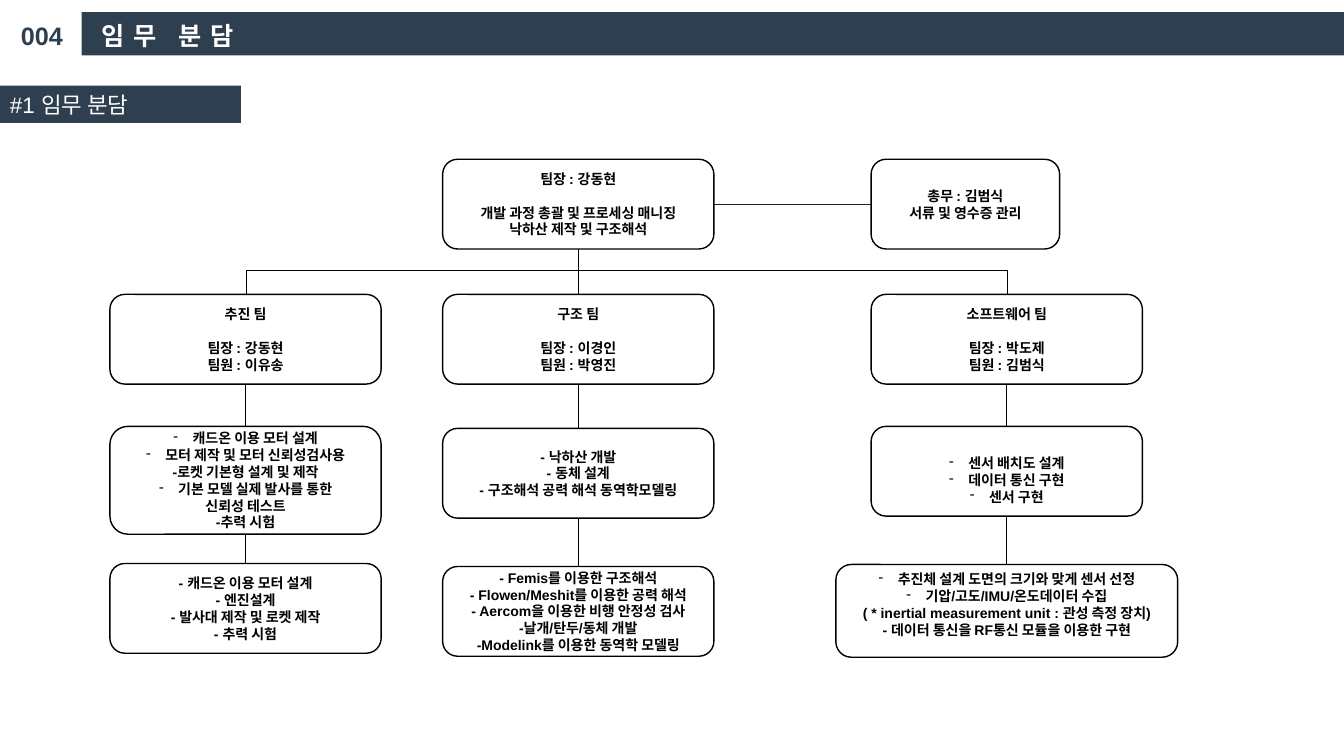
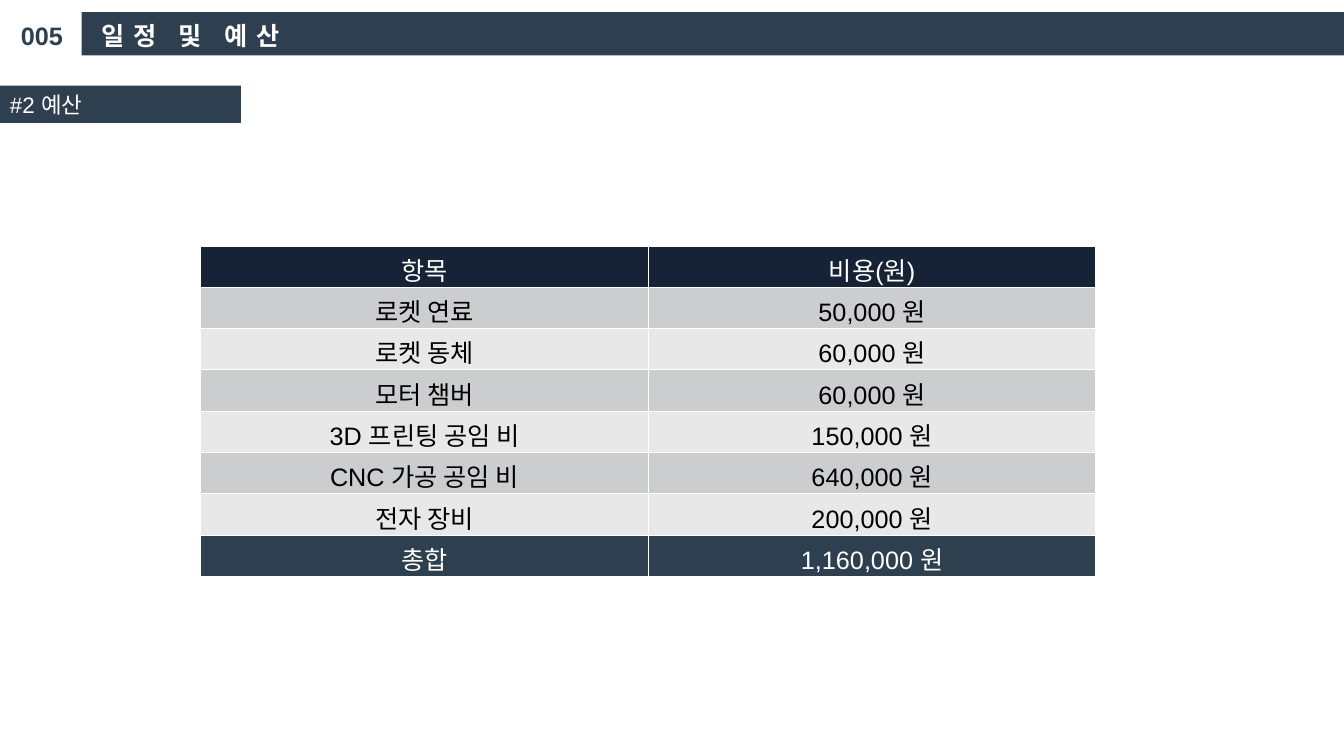
from lxml.etree import SubElement
from pptx import Presentation
from pptx.dml.color import RGBColor
from pptx.enum.shapes import MSO_CONNECTOR as Line, MSO_SHAPE as Shape
from pptx.enum.text import MSO_ANCHOR as Anchor, PP_ALIGN as Align
from pptx.oxml.ns import qn
from pptx.util import Inches, Pt

SLATE = RGBColor(0x2E, 0x3F, 0x4F)
NAVY = RGBColor(0x16, 0x23, 0x37)
WHITE = RGBColor(0xFF, 0xFF, 0xFF)
BLACK = RGBColor(0x00, 0x00, 0x00)
DARK_BAND = RGBColor(0xCC, 0xCD, 0xCE)
LIGHT_BAND = RGBColor(0xE8, 0xE8, 0xE8)
FONT = "Arial"
TOP, LEFT, BOTTOM, RIGHT = range(4)
BOX_WIDTH, BOX_HEIGHT = 2.69, 0.89
LINE_GAP = 12
INSET = 0.05


class Bullet(str):
    pass


class SlideBuilder:
    def __init__(self, deck):
        self.deck = deck
        self.slide = None

    def start(self, number, title, section):
        self.slide = self.deck.slides.add_slide(self.deck.slide_layouts[6])
        self.band(0.81, 0.12, 12.52, 0.43)
        heading = self.label(0.91, 4, title, WHITE)
        heading.runs[0].font._element.set("spc", "600")
        self.label(0.11, 0.7, number, SLATE)
        tab = self.band(0, 0.85, 2.39, 0.37)
        tab.text_frame.vertical_anchor = Anchor.MIDDLE
        self.fill_text(tab.text_frame.paragraphs[0], section, 16, WHITE, Align.LEFT)

    def fill_text(self, para, text, size, color, align, bold=False):
        para.text = text
        para.alignment = align
        para.font.name = FONT
        para.font.size = Pt(size)
        para.font.bold = bold
        para.font.color.rgb = color
        return para

    def label(self, left, width, text, color):
        box = self.slide.shapes.add_textbox(Inches(left), Inches(0.15), Inches(width), Inches(0.4))
        box.text_frame.word_wrap = True
        return self.fill_text(box.text_frame.paragraphs[0], text, 18, color, Align.LEFT, True)

    def shape(self, kind, left, top, width, height, fill):
        shape = self.slide.shapes.add_shape(
            kind, Inches(left), Inches(top), Inches(width), Inches(height))
        shape.shadow.inherit = False
        shape.fill.solid()
        shape.fill.fore_color.rgb = fill
        return shape

    def band(self, left, top, width, height):
        band = self.shape(Shape.RECTANGLE, left, top, width, height, SLATE)
        band.line.fill.background()
        return band

    def box(self, left, top, lines, width=BOX_WIDTH, height=BOX_HEIGHT,
            heading=False, above=0, below=0):
        box = self.shape(Shape.ROUNDED_RECTANGLE, left, top, width, height, WHITE)
        box.line.color.rgb = BLACK
        box.line.width = Pt(1)
        frame = box.text_frame
        frame.word_wrap = True
        frame.vertical_anchor = Anchor.MIDDLE
        frame.margin_top = Inches(INSET + above)
        frame.margin_bottom = Inches(INSET + below)
        for index, text in enumerate(lines):
            para = frame.paragraphs[0] if index == 0 else frame.add_paragraph()
            self.fill_text(para, str(text), 10, BLACK, Align.CENTER, True)
            if heading and index == 0:
                para.space_after = Pt(LINE_GAP)
            if isinstance(text, Bullet):
                self.bullet(para)
        return box

    def bullet(self, para):
        properties = para._p.get_or_add_pPr()
        properties.set("marL", str(Inches(0.19)))
        properties.set("indent", str(-Inches(0.19)))
        mark = properties.makeelement(qn("a:buChar"), {"char": "-"})
        properties.find(qn("a:defRPr")).addprevious(mark)

    def connector(self, kind, color=BLACK, ends=(0, 0, 0, 0)):
        connector = self.slide.shapes.add_connector(kind, *map(Inches, ends))
        connector.line.color.rgb = color
        connector.line.width = Pt(0.5)
        SubElement(connector._element.spPr, qn("a:effectLst"))
        return connector

    def join(self, first, second, sides=(BOTTOM, TOP), color=BLACK):
        connector = self.connector(Line.STRAIGHT, color)
        connector.begin_connect(first, sides[0])
        connector.end_connect(second, sides[1])

    def bracket(self, left, right, bottom, rise):
        span, depth = right - left, 0.01
        x, y = (left + right - depth) / 2, bottom - (span + depth) / 2
        connector = self.connector(Line.ELBOW, ends=(x + depth, y + span, x, y))
        connector._element.spPr.find(qn("a:xfrm")).set("rot", "5400000")
        guides = connector._element.spPr.find(qn("a:prstGeom")).get_or_add_avLst()
        SubElement(guides, qn("a:gd"), name="adj1", fmla=f"val {round(rise / depth * 100000)}")

    def table(self, left, top, column_width, row_height, rows):
        frame = self.slide.shapes.add_table(
            len(rows), len(rows[0]), Inches(left), Inches(top),
            Inches(column_width * len(rows[0])), Inches(row_height * len(rows)))
        last = len(rows) - 1
        for row, values in enumerate(rows):
            band = DARK_BAND if row % 2 else LIGHT_BAND
            fill = {0: NAVY, last: SLATE}.get(row, band)
            color = WHITE if row in (0, last) else BLACK
            for column, text in enumerate(values):
                cell = frame.table.cell(row, column)
                cell.fill.solid()
                cell.fill.fore_color.rgb = fill
                self.fill_text(cell.text_frame.paragraphs[0], text, 18, color, Align.CENTER)


def build_roles(page):
    page.start("004", "임무 분담", "#1 임무 분담")
    leader = page.box(4.39, 1.58, [
        "팀장 : 강동현", "개발 과정 총괄 및 프로세싱 매니징", "낙하산 제작 및 구조해석"], heading=True)
    treasurer = page.box(8.64, 1.58, ["총무 : 김범식", "서류 및 영수증 관리"], width=1.87)
    propulsion, structure, software = [
        page.box(left, 2.92, [name, f"팀장 : {head}", f"팀원 : {member}"], heading=True)
        for left, name, head, member in [
            (1.09, "추진 팀", "강동현", "이유송"),
            (4.39, "구조 팀", "이경인", "박영진"),
            (8.64, "소프트웨어 팀", "박도제", "김범식")]]
    motor = page.box(1.09, 4.23, [
        Bullet("캐드온 이용 모터 설계"), Bullet("모터 제작 및 모터 신뢰성검사용"),
        "-로켓 기본형 설계 및 제작", Bullet("기본 모델 실제 발사를 통한"),
        "신뢰성 테스트", "-추력 시험"], height=1.07)
    airframe = page.box(4.39, 4.25, [
        "- 낙하산 개발", "- 동체 설계", "- 구조해석 공력 해석 동역학모델링"])
    sensors = page.box(8.64, 4.23, [
        Bullet("센서 배치도 설계"), Bullet("데이터 통신 구현"), Bullet("센서 구현")], above=0.17)
    engine = page.box(1.09, 5.59, [
        "- 캐드온 이용 모터 설계", "- 엔진설계", "- 발사대 제작 및 로켓 제작", "- 추력 시험"])
    analysis = page.box(4.39, 5.62, [
        "- Femis를 이용한 구조해석", "- Flowen/Meshit를 이용한 공력 해석",
        "- Aercom을 이용한 비행 안정성 검사", "-날개/탄두/동체 개발",
        "-Modelink를 이용한 동역학 모델링"])
    telemetry = page.box(8.29, 5.6, [
        Bullet("추진체 설계 도면의 크기와 맞게 센서 선정"), Bullet("기압/고도/IMU/온도데이터 수집"),
        "( * inertial measurement unit : 관성 측정 장치)",
        "- 데이터 통신을 RF통신 모듈을 이용한 구현"], width=3.39, height=0.92, below=0.13)
    page.join(leader, structure)
    for team, tasks, details in [
            (propulsion, motor, engine), (structure, airframe, analysis),
            (software, sensors, telemetry)]:
        page.join(team, tasks)
        page.join(tasks, details)
    page.bracket(2.44, 9.99, 2.93, 0.25)
    page.join(leader, treasurer, (RIGHT, LEFT), NAVY)


def build_budget(page):
    page.start("005", "일정 및 예산", "#2 예산")
    page.table(1.99, 2.44, 4.44, 0.41, [
        ("항목", "비용(원)"),
        ("로켓 연료", "50,000 원"),
        ("로켓 동체", "60,000 원"),
        ("모터 챔버", "60,000 원"),
        ("3D 프린팅 공임 비", "150,000 원"),
        ("CNC 가공 공임 비", "640,000 원"),
        ("전자 장비", "200,000 원"),
        ("총합", "1,160,000 원")])


def main():
    deck = Presentation()
    deck.slide_width, deck.slide_height = Inches(13.33), Inches(7.5)
    page = SlideBuilder(deck)
    build_roles(page)
    build_budget(page)
    deck.save("out.pptx")


if __name__ == "__main__":
    main()
